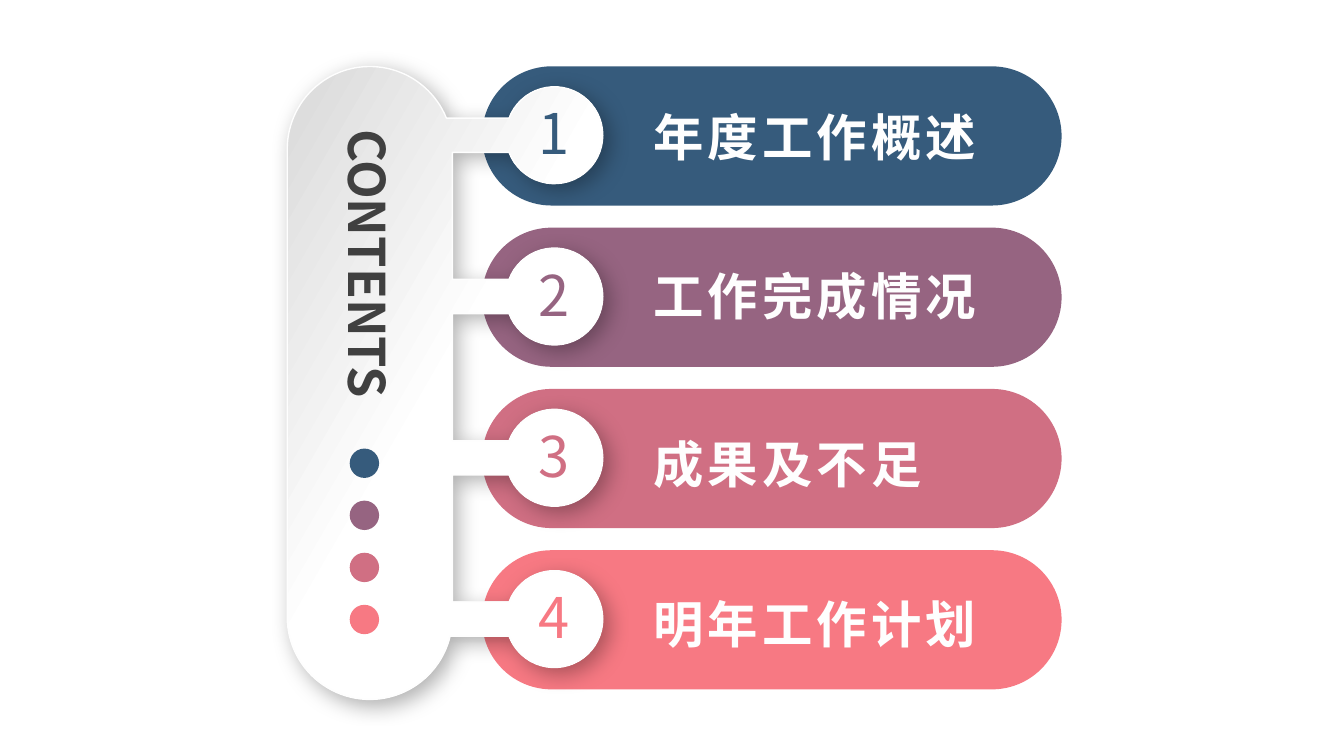
"""Build the contents slide: a panel with four numbered knobs reaching into coloured bars."""
import math
from dataclasses import dataclass

import lxml.etree
import pptx
import pptx.dml.color
import pptx.enum.shapes
import pptx.enum.text
import pptx.oxml.ns
import pptx.shapes.autoshape
import pptx.slide
import pptx.util

Pt = pptx.util.Pt
qn = pptx.oxml.ns.qn
SHAPE = pptx.enum.shapes.MSO_SHAPE
ALIGN = pptx.enum.text.PP_ALIGN
Point = tuple[float, float]

FONT = "Noto Sans CJK SC"
COLORS = {
    "blue": "365B7C",
    "purple": "966481",
    "rose": "D06F83",
    "coral": "F77983",
    "white": "FFFFFF",
    "offwhite": "FEFEFE",
    "grey": "D9D9D9",
    "dark": "404040",
    "black": "000000",
}

BAR_LEFT, BAR_TOP, BAR_WIDTH, BAR_HEIGHT, BAR_PITCH = 344.3, 47.4, 414, 99.4, 115.2
DOT_LEFT, DOT_TOP, DOT_SIZE, DOT_PITCH = 249.8, 320.4, 21, 37.2
PANEL_X, PANEL_R, CAP_TOP_Y, CAP_BOTTOM_Y = 264.2, 59, 106.5, 440.6
KNOB_X, KNOB_TOP_Y, KNOB_R, NECK_HALF = 396, 96.6, 34.6, 12.2
DIGIT_RISE = 2
TITLE_LEFT, TITLE_HEIGHT, TITLE_CHAR_WIDTH, TITLE_MARGIN = 459.4, 51.1, 39, 7.2


@dataclass
class Section:
    title: str
    color: str
    title_top: float


@dataclass
class Style:
    size: float
    color: str
    bold: bool = True
    spacing: float = 0
    align: ALIGN = ALIGN.LEFT


SECTIONS = [
    Section("年度工作概述", "blue", 72),
    Section("工作完成情况", "purple", 185.8),
    Section("成果及不足", "rose", 306),
    Section("明年工作计划", "coral", 419.8),
]
KNOBS_Y = [KNOB_TOP_Y + BAR_PITCH * i for i in range(len(SECTIONS))]


def rgb(name: str) -> pptx.dml.color.RGBColor:
    return pptx.dml.color.RGBColor.from_string(COLORS[name])


def add_solid(s: pptx.slide.Slide, kind: SHAPE, left: float, top: float, width: float,
              height: float, color: str) -> pptx.shapes.autoshape.Shape:
    sp = s.shapes.add_shape(kind, Pt(left), Pt(top), Pt(width), Pt(height))
    sp.shadow.inherit = False
    sp.fill.solid()
    sp.fill.fore_color.rgb = rgb(color)
    sp.line.fill.background()
    return sp


def add_text(s: pptx.slide.Slide, text: str, left: float, top: float, width: float,
             height: float, style: Style) -> pptx.shapes.autoshape.Shape:
    sp = s.shapes.add_textbox(Pt(left), Pt(top), Pt(width), Pt(height))
    sp.text_frame.word_wrap = True
    p = sp.text_frame.paragraphs[0]
    p.alignment = style.align
    r = p.add_run()
    r.text = text
    r.font.size = Pt(style.size)
    r.font.bold = style.bold
    r.font.name = FONT
    r.font.color.rgb = rgb(style.color)
    props = r.font._element
    lxml.etree.SubElement(props, qn("a:ea"), typeface=FONT)
    if style.spacing:
        props.set("spc", str(int(style.spacing * 100)))
    return sp


def arc(x: float, y: float, radius: float, start: float, end: float) -> list[Point]:
    steps = 48
    angles = [math.radians(start + (end - start) * i / steps) for i in range(steps + 1)]
    return [(x + radius * math.cos(a), y + radius * math.sin(a)) for a in angles]


def angle_at(rise: float, radius: float) -> float:
    return math.degrees(math.asin(rise / radius))


def panel_points() -> list[Point]:
    right = PANEL_X + PANEL_R
    neck = angle_at(NECK_HALF, KNOB_R)
    upper = angle_at(KNOBS_Y[0] - NECK_HALF - CAP_TOP_Y, PANEL_R)
    lower = angle_at(KNOBS_Y[-1] + NECK_HALF - CAP_BOTTOM_Y, PANEL_R)
    side: list[Point] = []
    for y in KNOBS_Y:
        side.append((right, y - NECK_HALF))
        side += arc(KNOB_X, y, KNOB_R, 180 + neck, 540 - neck)
        side.append((right, y + NECK_HALF))
    top_cap = arc(PANEL_X, CAP_TOP_Y, PANEL_R, 180, 360 + upper)
    bottom_cap = arc(PANEL_X, CAP_BOTTOM_Y, PANEL_R, lower, 180)
    return top_cap + side[1:-1] + bottom_cap


def add_soft_shadow(sp: pptx.shapes.autoshape.Shape) -> None:
    sp.shadow.inherit = False
    effects = sp._element.spPr.find(qn("a:effectLst"))
    shadow = lxml.etree.SubElement(
        effects, qn("a:outerShdw"), blurRad=str(Pt(15)), dist=str(Pt(5)),
        dir="2700000", algn="tl", rotWithShape="0")
    tint = lxml.etree.SubElement(shadow, qn("a:srgbClr"), val=COLORS["black"])
    lxml.etree.SubElement(tint, qn("a:alpha"), val="30000")


def add_panel(s: pptx.slide.Slide) -> None:
    start, *rest = [(Pt(x), Pt(y)) for x, y in panel_points()]
    builder = s.shapes.build_freeform(*start)
    builder.add_line_segments(rest, close=True)
    sp = builder.convert_to_shape()
    sp.fill.gradient()
    sp.fill.gradient_angle = 330
    for stop, position, color in zip(sp.fill.gradient_stops, (0, 0.5), ("grey", "white")):
        stop.position = position
        stop.color.rgb = rgb(color)
    sp.line.color.rgb = rgb("offwhite")
    sp.line.width = Pt(1)
    add_soft_shadow(sp)


def add_heading(s: pptx.slide.Slide) -> None:
    style = Style(36, "dark", align=ALIGN.RIGHT)
    sp = add_text(s, "CONTENTS", 149.8, 156.2, 226.1, 44.6, style)
    sp.rotation = 90
    sp.text_frame.margin_top = sp.text_frame.margin_bottom = 0


def add_digit(s: pptx.slide.Slide, number: int, knob_y: float, color: str) -> None:
    style = Style(40, color, bold=False, align=ALIGN.CENTER)
    sp = add_text(s, str(number), KNOB_X - KNOB_R, knob_y - KNOB_R - DIGIT_RISE,
                  2 * KNOB_R, 2 * KNOB_R, style)
    tf = sp.text_frame
    tf.margin_left = tf.margin_right = tf.margin_top = tf.margin_bottom = 0
    tf.vertical_anchor = pptx.enum.text.MSO_ANCHOR.MIDDLE


def add_title(s: pptx.slide.Slide, section: Section) -> None:
    width = TITLE_CHAR_WIDTH * len(section.title) + 2 * TITLE_MARGIN
    sp = add_text(s, section.title, TITLE_LEFT, section.title_top, width, TITLE_HEIGHT,
                  Style(36, "offwhite", spacing=3))
    sp.text_frame.word_wrap = False
    sp.text_frame.auto_size = pptx.enum.text.MSO_AUTO_SIZE.SHAPE_TO_FIT_TEXT


def main() -> None:
    prs = pptx.Presentation()
    prs.slide_width, prs.slide_height = Pt(960), Pt(540)
    s = prs.slides.add_slide(prs.slide_layouts[6])
    for i, section in enumerate(SECTIONS):
        sp = add_solid(s, SHAPE.ROUNDED_RECTANGLE, BAR_LEFT, BAR_TOP + BAR_PITCH * i,
                       BAR_WIDTH, BAR_HEIGHT, section.color)
        sp.adjustments[0] = 0.5
    add_panel(s)
    add_heading(s)
    for i, section in enumerate(SECTIONS):
        add_solid(s, SHAPE.OVAL, DOT_LEFT, DOT_TOP + DOT_PITCH * i,
                  DOT_SIZE, DOT_SIZE, section.color)
    for number, (section, knob_y) in enumerate(zip(SECTIONS, KNOBS_Y), start=1):
        add_digit(s, number, knob_y, section.color)
        add_title(s, section)
    prs.save("out.pptx")


if __name__ == "__main__":
    main()
